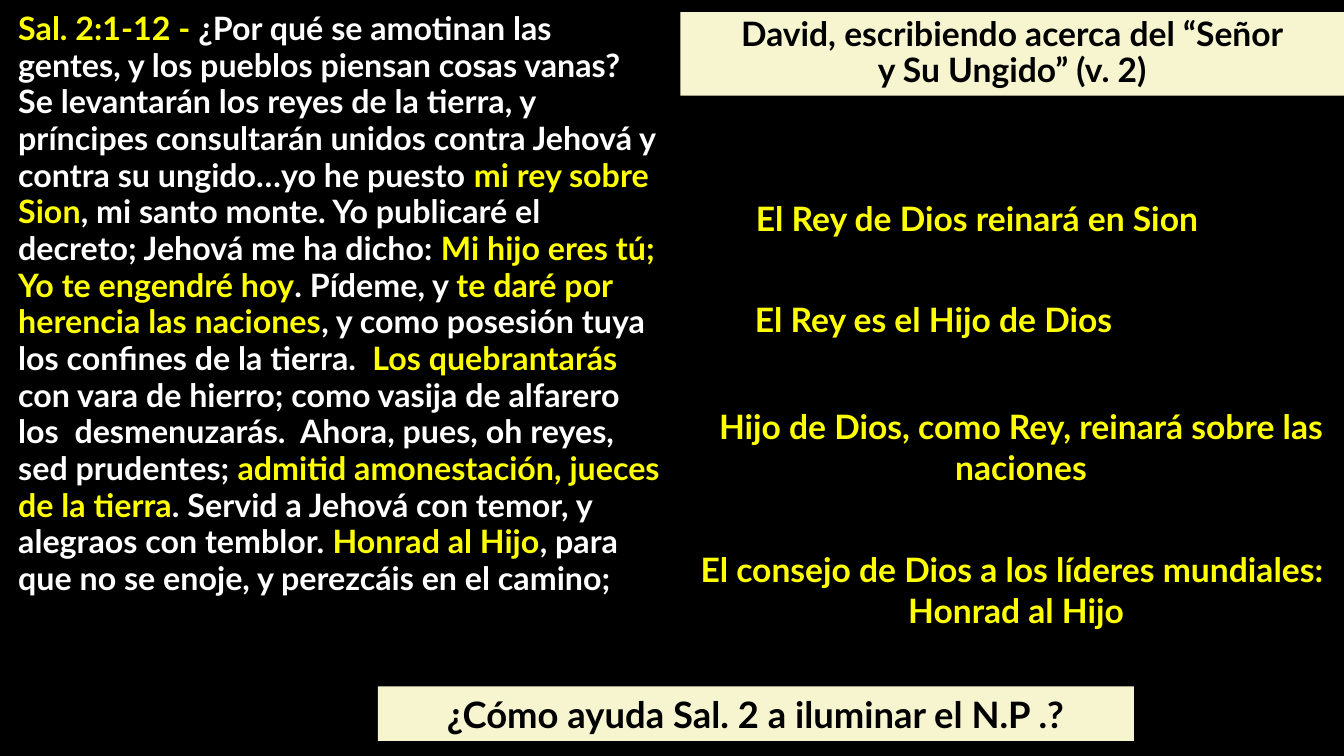
"""Build a slide on Psalm 2 with the passage, its highlights and their meaning."""
import itertools

import pptx
import pptx.dml.color
import pptx.enum.shapes
import pptx.enum.text
import pptx.oxml.ns
import pptx.util

Pt = pptx.util.Pt
ALIGN = pptx.enum.text.PP_ALIGN
ANCHOR = pptx.enum.text.MSO_ANCHOR

BLACK = pptx.dml.color.RGBColor(0x00, 0x00, 0x00)
WHITE = pptx.dml.color.RGBColor(0xFF, 0xFF, 0xFF)
YELLOW = pptx.dml.color.RGBColor(0xFF, 0xFF, 0x00)
CREAM = pptx.dml.color.RGBColor(0xF6, 0xF5, 0xCF)

FONT = "Lato"

PASSAGE = [
    "Sal. 2:1-12 - ",
    "¿Por qué se amotinan las gentes, y los pueblos piensan cosas vanas?  "
    "Se levantarán los reyes de la tierra, y príncipes consultarán unidos "
    "contra Jehová y contra su ungido…yo he puesto",
    " mi rey sobre Sion",
    ", mi santo monte. Yo publicaré el decreto; Jehová me ha dicho: ",
    "Mi hijo eres tú; Yo te engendré hoy",
    ". Pídeme, y ",
    "te daré por herencia las naciones",
    ", y como posesión tuya los confines de la tierra.  ",
    "Los quebrantarás",
    " con vara de hierro; como vasija de alfarero los  desmenuzarás.  "
    "Ahora, pues, oh reyes, sed prudentes; ",
    "admitid amonestación, jueces de la tierra",
    ". Servid a Jehová con temor, y alegraos con temblor. ",
    "Honrad al Hijo",
    ", para que no se enoje, y perezcáis en el camino;",
]

MEANINGS = [
    ("El Rey de Dios reinará en Sion", (532.8, 138.2, 401.8, 36), ALIGN.LEFT),
    ("El Rey es el Hijo de Dios", (532.1, 210.2, 354.2, 36), ALIGN.LEFT),
    ("Hijo de Dios, como Rey, reinará sobre las naciones",
     (498.2, 286.6, 462.2, 65.5), ALIGN.CENTER),
    ("El consejo de Dios a los líderes mundiales:  Honrad al Hijo",
     (491.8, 388.8, 468, 65.5), ALIGN.CENTER),
]


def place(element, box):
    """Move and resize an element to a box given in points."""
    element.left, element.top, element.width, element.height = map(Pt, box)


def format_run(run, size, color):
    """Give a run the bold slide font."""
    run.font.name = FONT
    run.font.size = Pt(size)
    run.font.bold = True
    run.font.color.rgb = color


def format_text(frame, size, color, align, anchor, spacing=1.0):
    """Format every paragraph and run of a text frame."""
    frame.word_wrap = True
    frame.auto_size = pptx.enum.text.MSO_AUTO_SIZE.NONE
    frame.vertical_anchor = anchor
    for paragraph in frame.paragraphs:
        paragraph.alignment = align
        paragraph.line_spacing = spacing
        paragraph.space_before = Pt(0)
        for run in paragraph.runs:
            format_run(run, size, color)


def fill_cream(element):
    """Paint an element with the cream banner colour."""
    element.fill.solid()
    element.fill.fore_color.rgb = CREAM


def write_heading(title):
    """Fill the title placeholder as a cream banner."""
    place(title, (486, 8.6, 474, 59.8))
    fill_cream(title)
    title.text_frame.text = "David, escribiendo acerca del “Señor\ny Su Ungido” (v. 2)"
    format_text(title.text_frame, 24, BLACK, ALIGN.CENTER, ANCHOR.MIDDLE, 0.9)


def write_passage(body):
    """Fill the body placeholder with alternating yellow and white phrases."""
    place(body, (5.8, 4.3, 473.8, 510.5))
    paragraph = body.text_frame.paragraphs[0]
    for phrase in PASSAGE:
        paragraph.add_run().text = phrase
    format_text(body.text_frame, 23, WHITE, ALIGN.LEFT, ANCHOR.TOP, 0.95)
    for run, color in zip(paragraph.runs, itertools.cycle((YELLOW, WHITE))):
        run.font.color.rgb = color
    properties = paragraph._p.get_or_add_pPr()
    properties.set("marL", "0")
    properties.set("indent", "0")
    properties.append(pptx.oxml.parse_xml(
        f"<a:buNone {pptx.oxml.ns.nsdecls('a')}/>"))


def add_meaning(slide, text, box, align):
    """Add one yellow statement beside the passage."""
    meaning = slide.shapes.add_textbox(*map(Pt, box))
    meaning.text_frame.text = text
    format_text(meaning.text_frame, 24, YELLOW, align, ANCHOR.TOP)


def add_question(slide):
    """Add the closing question on a cream banner."""
    question = slide.shapes.add_shape(
        pptx.enum.shapes.MSO_SHAPE.RECTANGLE, *map(Pt, (270, 490.3, 540, 38.9)))
    question.shadow.inherit = False
    fill_cream(question)
    question.line.fill.background()
    question.text_frame.text = "¿Cómo ayuda Sal. 2 a iluminar el N.P .?"
    format_text(question.text_frame, 26, BLACK, ALIGN.CENTER, ANCHOR.MIDDLE)


def main():
    """Create the presentation and save it."""
    presentation = pptx.Presentation()
    presentation.slide_width = Pt(960)
    presentation.slide_height = Pt(540)
    slide = presentation.slides.add_slide(presentation.slide_layouts[1])
    slide.background.fill.solid()
    slide.background.fill.fore_color.rgb = BLACK

    write_passage(slide.placeholders[1])
    write_heading(slide.shapes.title)
    for text, box, align in MEANINGS:
        add_meaning(slide, text, box, align)
    add_question(slide)
    presentation.save("out.pptx")


if __name__ == "__main__":
    main()
